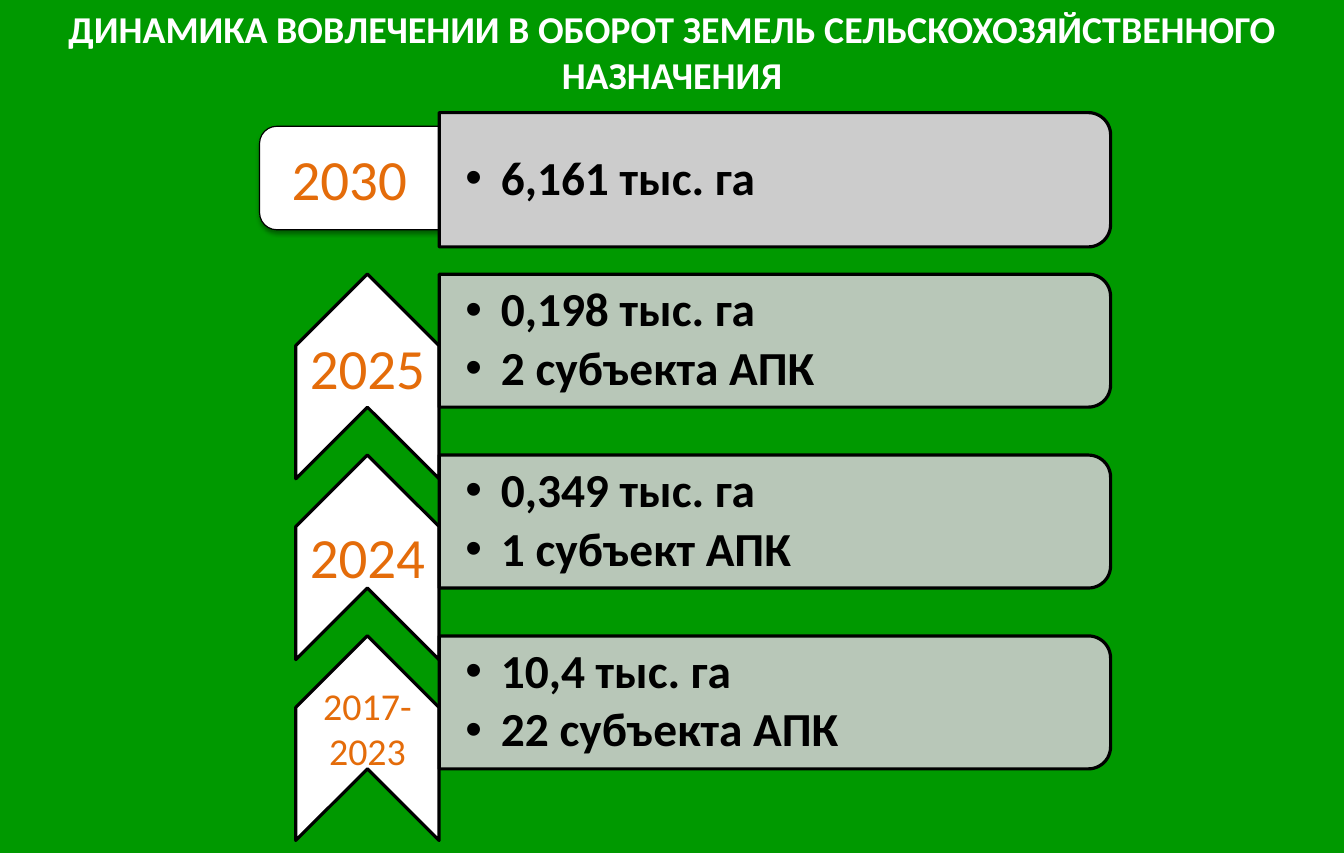
"""Build the slide on the yearly return of farmland to use."""
from dataclasses import dataclass
from typing import Any

import lxml.etree
import pptx
import pptx.dml.color
import pptx.enum.shapes
import pptx.enum.text
import pptx.oxml.ns
import pptx.util

Pt = pptx.util.Pt
SHAPE = pptx.enum.shapes.MSO_SHAPE
ANCHOR = pptx.enum.text.MSO_ANCHOR
ALIGN = pptx.enum.text.PP_ALIGN

SLIDE_WIDTH, SLIDE_HEIGHT = 850.4, 540
ROW_PITCH = 114.5
FIRST_ROW_CENTER = 215.7
BAR_LEFT, BAR_WIDTH = 277.9, 424.8
CHEVRON_CENTER, CHEVRON_DROP = 232.5, 22.6
CHEVRON_LENGTH, CHEVRON_WIDTH = 129.6, 90.7
TITLE = "ДИНАМИКА ВОВЛЕЧЕНИИ В ОБОРОТ ЗЕМЕЛЬ СЕЛЬСКОХОЗЯЙСТВЕННОГО НАЗНАЧЕНИЯ"
TITLE_FONT = {"name": "Calibri", "size": Pt(24), "bold": True}
YEAR_FONT = {"name": "Calibri", "bold": False}
BULLET_FONT = {"name": "Calibri", "size": Pt(30), "bold": True}
BULLET_FORMAT = {"line_spacing": 0.9, "space_after": Pt(4.5), "alignment": ALIGN.LEFT}
BULLET_FRAME = {
    "word_wrap": True, "vertical_anchor": ANCHOR.MIDDLE, "margin_left": Pt(16.5),
    "margin_top": Pt(1.5), "margin_right": Pt(1.5), "margin_bottom": Pt(1.5),
}


@dataclass
class Period:
    """A period with its year label and its results."""
    year: str
    label_top: float
    label_height: float
    label_size: float
    results: list[str]


GOAL = Period("2030", 87.1, 51, 36, ["6,161 тыс. га"])
PERIODS = [
    Period("2025", 207.2, 51, 36, ["0,198 тыс. га", "2 субъекта АПК"]),
    Period("2024", 326.6, 51, 36, ["0,349 тыс. га", "1 субъект АПК"]),
    Period("2017-\v2023", 428.4, 65.5, 24, ["10,4 тыс. га", "22 субъекта АПК"]),
]


def color(value: str) -> pptx.dml.color.RGBColor:
    """Turn a hex string into a colour."""
    return pptx.dml.color.RGBColor.from_string(value)


def apply(target: Any, values: dict[str, Any]) -> None:
    """Set every attribute given in the values."""
    for name, value in values.items():
        setattr(target, name, value)


def add_element(parent: Any, tag: str, **attributes: str) -> Any:
    """Append a drawing element to its parent."""
    return lxml.etree.SubElement(parent, pptx.oxml.ns.qn(tag), attributes)


def style_runs(paragraph: Any, values: dict[str, Any], font_color: str) -> None:
    """Format all runs of a paragraph."""
    for run in paragraph.runs:
        apply(run.font, values)
        run.font.color.rgb = color(font_color)


def add_block(slide: Any, kind: Any, center: tuple[float, float],
              size: tuple[float, float], fill: str, line_width: float,
              rotation: float = 0) -> Any:
    """Add an outlined shape around its centre."""
    (x, y), (width, height) = center, size
    shape = slide.shapes.add_shape(
        kind, Pt(x - width / 2), Pt(y - height / 2), Pt(width), Pt(height))
    shape.rotation = rotation
    shape.shadow.inherit = False
    shape.fill.solid()
    shape.fill.fore_color.rgb = color(fill)
    shape.line.color.rgb = color("000000")
    shape.line.width = Pt(line_width)
    return shape


def add_results(slide: Any, center: float, height: float, results: list[str],
                opacity: int) -> None:
    """Add a bar of the given opacity in percent with its bulleted results."""
    bar = add_block(slide, SHAPE.ROUND_2_SAME_RECTANGLE,
                    (BAR_LEFT + BAR_WIDTH / 2, center), (height, BAR_WIDTH),
                    "CCCCCC", 2, 90)
    if opacity < 100:
        fill = bar._element.spPr.find(pptx.oxml.ns.qn("a:solidFill"))
        add_element(fill[0], "a:alpha", val=str(opacity * 1000))
    box = slide.shapes.add_textbox(
        Pt(BAR_LEFT), Pt(center - height / 2 + 4), Pt(BAR_WIDTH - 4), Pt(height - 8))
    apply(box.text_frame, BULLET_FRAME)
    box.text_frame.text = "\n".join(results)
    for paragraph in box.text_frame.paragraphs:
        properties = paragraph._p.get_or_add_pPr()
        properties.set("marL", str(Pt(22.5)))
        properties.set("indent", str(-Pt(22.5)))
        add_element(properties, "a:buFont", typeface="Arial")
        add_element(properties, "a:buChar", char="•")
        apply(paragraph, BULLET_FORMAT)
        style_runs(paragraph, BULLET_FONT, "000000")


def add_year(slide: Any, left: float, period: Period) -> None:
    """Add the centred year label of a period."""
    box = slide.shapes.add_textbox(
        Pt(left), Pt(period.label_top), Pt(90.7), Pt(period.label_height))
    box.text_frame.word_wrap = True
    box.text_frame.text = period.year
    paragraph = box.text_frame.paragraphs[0]
    paragraph.alignment = ALIGN.CENTER
    style_runs(paragraph, YEAR_FONT | {"size": Pt(period.label_size)}, "E46C0A")


def add_title(slide: Any) -> None:
    """Place and format the slide title."""
    title = slide.shapes.title
    apply(title, {"left": Pt(0), "top": Pt(0), "width": Pt(SLIDE_WIDTH), "height": Pt(77)})
    title.text_frame.text = TITLE
    apply(title.text_frame, {"word_wrap": True, "vertical_anchor": ANCHOR.TOP,
                             "auto_size": pptx.enum.text.MSO_AUTO_SIZE.NONE})
    paragraph = title.text_frame.paragraphs[0]
    paragraph.alignment = ALIGN.CENTER
    style_runs(paragraph, TITLE_FONT, "FFFFFF")


def add_goal(slide: Any) -> None:
    """Add the shadowed card of the goal year."""
    card = add_block(slide, SHAPE.ROUNDED_RECTANGLE, (431.3, 112.7), (534.2, 65.5),
                     "FFFFFF", 0.75)
    effects = card._element.spPr.find(pptx.oxml.ns.qn("a:effectLst"))
    shadow = add_element(effects, "a:outerShdw", blurRad=str(Pt(3.1)),
                         dist=str(Pt(1.6)), dir="5400000", rotWithShape="0")
    shade = add_element(shadow, "a:srgbClr", val="000000")
    add_element(shade, "a:alpha", val="38000")
    add_year(slide, 175.7, GOAL)
    add_results(slide, 113.8, 85, GOAL.results, 100)


def main() -> None:
    """Build and save the presentation."""
    presentation = pptx.Presentation()
    presentation.slide_width = Pt(SLIDE_WIDTH)
    presentation.slide_height = Pt(SLIDE_HEIGHT)
    slide = presentation.slides.add_slide(presentation.slide_layouts[5])
    slide.background.fill.solid()
    slide.background.fill.fore_color.rgb = color("009900")
    add_title(slide)
    for index, period in enumerate(PERIODS):
        center = FIRST_ROW_CENTER + index * ROW_PITCH
        add_block(slide, SHAPE.CHEVRON, (CHEVRON_CENTER, center + CHEVRON_DROP),
                  (CHEVRON_LENGTH, CHEVRON_WIDTH), "FFFFFF", 2, 270)
        add_results(slide, center, 84.2, period.results, 90)
    for period in PERIODS:
        add_year(slide, 187.2, period)
    add_goal(slide)
    presentation.save("out.pptx")


if __name__ == "__main__":
    main()
